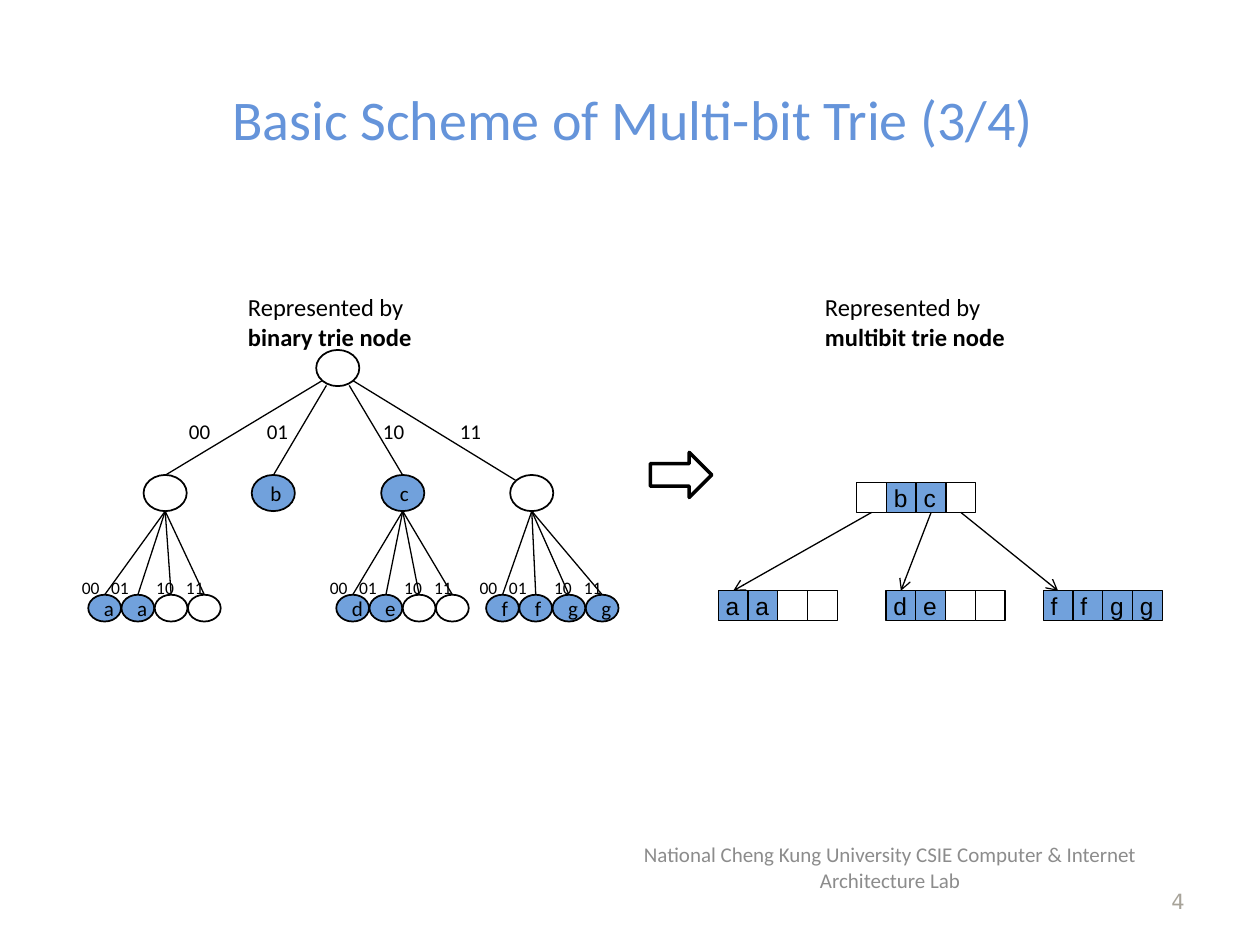
from lxml.etree import SubElement
from pptx import Presentation
from pptx.dml.color import RGBColor
from pptx.enum.shapes import MSO_CONNECTOR, MSO_SHAPE
from pptx.enum.text import MSO_ANCHOR, PP_ALIGN
from pptx.oxml.ns import qn
from pptx.util import Cm, Pt

BLACK = RGBColor(0x00, 0x00, 0x00)
WHITE = RGBColor(0xFF, 0xFF, 0xFF)
BLUE = RGBColor(0x71, 0xA1, 0xDC)
TITLE_BLUE = RGBColor(0x65, 0x94, 0xDA)
GREY = RGBColor(0x8C, 0x8C, 0x8C)
NUMBER_GREY = RGBColor(0xA7, 0xA3, 0x99)

# Content: text, box (left, top, width, height in cm), size, font, colour, alignment
PAGE_TEXTS = [
    ("Basic Scheme of Multi-bit Trie (3/4)", (1.4, 1.4, 22.73, 1.98),
     32, "Calibri", TITLE_BLUE, PP_ALIGN.CENTER),
    ("National Cheng Kung University CSIE Computer & Internet Architecture Lab",
     (12.7, 16.97, 10.49, 1.02), 12, "Calibri", GREY, PP_ALIGN.CENTER),
    ("4", (18.21, 17.65, 5.92, 1.02), 12, "DejaVu Sans", NUMBER_GREY, PP_ALIGN.RIGHT),
]
CAPTIONS = [("binary trie node", 4.75, 6.15), ("multibit trie node", 16.38, 5.64)]
BITS = ["00", "01", "10", "11"]

# Binary trie: each child has a centre x, a prefix, and leaves starting at leaf_left
ROOT_X, ROOT_Y = 6.81, 7.42
CHILDREN = [
    {"x": 3.33, "prefix": "", "leaves": ["a", "a", "", ""], "leaf_left": 1.78},
    {"x": 5.51, "prefix": "b", "leaves": [], "leaf_left": 0},
    {"x": 8.12, "prefix": "c", "leaves": ["d", "e", "", ""], "leaf_left": 6.78},
    {"x": 10.72, "prefix": "", "leaves": ["f", "f", "g", "g"], "leaf_left": 9.8},
]
ROOT_EDGES = [  # start and end of each edge below the root
    ((6.5, 7.67), (3.33, 9.58)), ((6.58, 7.77), (5.51, 9.58)),
    ((7.04, 7.77), (8.12, 9.58)), ((7.11, 7.67), (10.39, 9.68)),
]
EDGE_LABEL_LEFTS = [3.56, 5.13, 7.47, 9.02]
NODE_W, NODE_H, CHILD_Y = 0.87, 0.73, 9.94
LEAF_W, LEAF_H, LEAF_TOP, LEAF_PITCH = 0.66, 0.54, 11.99, 0.67
BIT_TABS = [0.59, 1.5, 2.1]

# Multibit trie: the root cell that points to each child node
CELL = 0.6
TABLE_ROOT_LEFT, TABLE_ROOT_TOP, TABLE_TOP = 17.27, 9.73, 11.91
TABLE_CHILDREN = [(0, 14.48), (2, 17.86), (3, 21.03)]


def style_font(para, size, name="Calibri", color=BLACK):
    para.font.size, para.font.name = Pt(size), name
    para.font.color.rgb = color


def add_text(page, text, box, size, name="Calibri", color=BLACK,
             align=PP_ALIGN.LEFT, anchor=MSO_ANCHOR.TOP, wrap=True):
    frame = page.shapes.add_textbox(*map(Cm, box)).text_frame
    frame.word_wrap, frame.vertical_anchor = wrap, anchor
    para = frame.paragraphs[0]
    para.text, para.alignment = text, align
    style_font(para, size, name, color)
    return para


def add_line(page, start, end, arrow=False):
    line = page.shapes.add_connector(MSO_CONNECTOR.STRAIGHT, *map(Cm, start + end))
    line.line.color.rgb, line.line.width = BLACK, Pt(0.75)
    SubElement(line._element.spPr, qn("a:effectLst"))
    if arrow:
        SubElement(line.line._get_or_add_ln(), qn("a:tailEnd"), type="arrow")


def add_outlined(page, kind, box, width):
    shape = page.shapes.add_shape(kind, *map(Cm, box))
    shape.shadow.inherit = False
    shape.line.color.rgb, shape.line.width = BLACK, Pt(width)
    return shape


def add_prefix_shape(page, kind, box, width, prefix):
    """A shape that is blue when it stores a prefix and white when empty."""
    shape = add_outlined(page, kind, box, width)
    shape.fill.solid()
    shape.fill.fore_color.rgb = BLUE if prefix else WHITE
    if prefix:
        shape.text_frame.text = prefix
    return shape


def add_node(page, x, y, width, height, prefix=""):
    box = (x - width / 2, y - height / 2, width, height)
    node = add_prefix_shape(page, MSO_SHAPE.OVAL, box, 1, prefix)
    para = node.text_frame.paragraphs[0]
    para.alignment = PP_ALIGN.CENTER
    style_font(para, 12)


def add_cells(page, left, top, prefixes):
    for column, prefix in enumerate(prefixes):
        box = (left + column * CELL, top, CELL, CELL)
        frame = add_prefix_shape(page, MSO_SHAPE.RECTANGLE, box, 0.75, prefix).text_frame
        frame.margin_left = Cm(0.15)
        frame.margin_top = frame.margin_right = frame.margin_bottom = 0
        frame.vertical_anchor = MSO_ANCHOR.TOP
        frame.paragraphs[0].alignment = PP_ALIGN.LEFT
        style_font(frame.paragraphs[0], 14, "Arial")


def add_binary_trie(page):
    add_node(page, ROOT_X, ROOT_Y, NODE_W, NODE_H)
    for (start, end), bits, left in zip(ROOT_EDGES, BITS, EDGE_LABEL_LEFTS):
        add_line(page, start, end)
        add_text(page, bits, (left, 8.32, 1.04, 0.71), 12, wrap=False)
    for child in CHILDREN:
        add_node(page, child["x"], CHILD_Y, NODE_W, NODE_H, child["prefix"])
        for index, prefix in enumerate(child["leaves"]):
            x = child["leaf_left"] + LEAF_W / 2 + index * LEAF_PITCH
            add_line(page, (child["x"], CHILD_Y + NODE_H / 2), (x, LEAF_TOP))
            add_node(page, x, LEAF_TOP + LEAF_H / 2, LEAF_W, LEAF_H, prefix)
        if child["leaves"]:
            box = (child["leaf_left"] - 0.38, 11.51, 3.3, 0.64)
            para = add_text(page, "\t".join(BITS), box, 10, wrap=False)
            tabs = para._p.get_or_add_pPr()
            tab_list = tabs.makeelement(qn("a:tabLst"))
            tabs.insert_element_before(tab_list, "a:defRPr", "a:extLst")
            for stop in BIT_TABS:
                SubElement(tab_list, qn("a:tab"), pos=str(Cm(stop)), algn="l")


def add_multibit_trie(page):
    add_cells(page, TABLE_ROOT_LEFT, TABLE_ROOT_TOP, [c["prefix"] for c in CHILDREN])
    for column, left in TABLE_CHILDREN:
        add_cells(page, left, TABLE_TOP, CHILDREN[column]["leaves"])
        start = (TABLE_ROOT_LEFT + (column + 0.5) * CELL, TABLE_ROOT_TOP + CELL)
        add_line(page, start, (left + CELL / 2, TABLE_TOP), arrow=True)


def main():
    deck = Presentation()
    deck.slide_width, deck.slide_height = Cm(25.4), Cm(19.05)
    page = deck.slides.add_slide(deck.slide_layouts[6])

    # Title, footer and page number
    for text, box, size, name, color, align in PAGE_TEXTS:
        add_text(page, text, box, size, name, color, align, MSO_ANCHOR.MIDDLE)

    # The two tries and the arrow between them
    add_binary_trie(page)
    arrow = add_outlined(page, MSO_SHAPE.RIGHT_ARROW, (13.11, 9.12, 1.24, 0.91), 2)
    arrow.fill.background()
    add_multibit_trie(page)

    # Captions
    for node_name, left, width in CAPTIONS:
        para = add_text(page, "Represented by ", (left, 5.77, width, 1.4), 14)
        para.add_line_break()
        span = para.add_run()
        span.text, span.font.bold = node_name, True

    deck.save("out.pptx")


if __name__ == "__main__":
    main()
